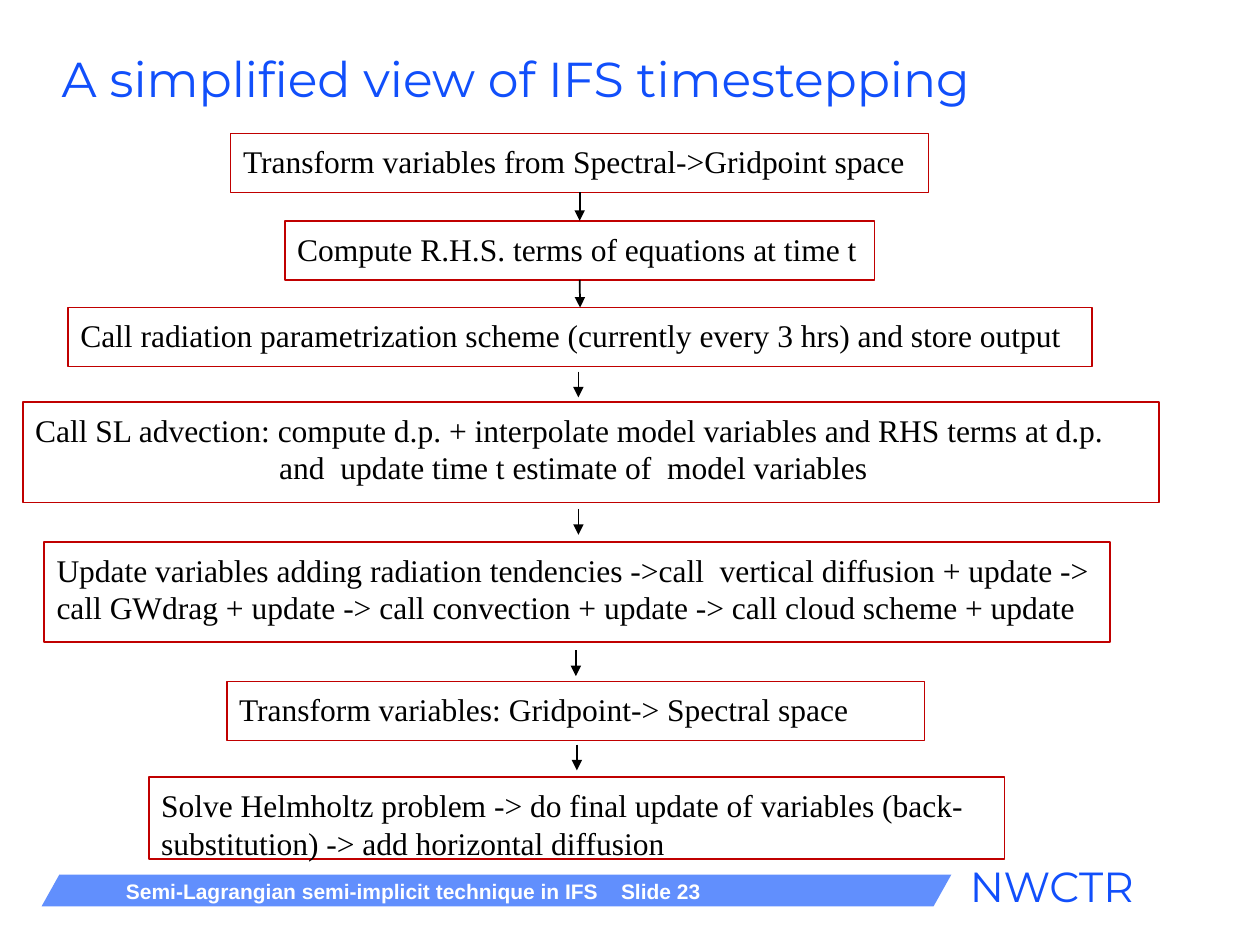
from lxml import etree
from pptx import Presentation
from pptx.dml.color import RGBColor
from pptx.enum.shapes import MSO_CONNECTOR as Connector, MSO_SHAPE as Shape
from pptx.enum.text import MSO_ANCHOR as Anchor, PP_ALIGN as Align
from pptx.oxml.ns import qn
from pptx.util import Cm, Pt

COLORS = {
    "blue": "114FFB",
    "band": "618FFD",
    "red": "C00000",
    "black": "000000",
    "white": "FFFFFF",
}

STEPS = [
    (4.65, 2.69, 14.07, 1.19, ["Transform variables from Spectral->Gridpoint space"]),
    (5.74, 4.45, 11.89, 1.19, ["Compute R.H.S. terms of equations at time t"]),
    (1.37, 6.2, 20.65, 1.19,
     ["Call radiation parametrization scheme (currently every 3 hrs) and store output"]),
    (0.46, 8.1, 22.91, 2.03,
     ["Call SL advection: compute d.p. + interpolate model variables and RHS terms at d.p.",
      "and  update time t estimate of  model variables"]),
    (0.89, 10.92, 21.49, 2.03,
     ["Update variables adding radiation tendencies ->call  vertical diffusion + update -> "
      "call GWdrag + update -> call convection + update -> call cloud scheme + update"]),
    (4.57, 13.74, 14.07, 1.19, ["Transform variables: Gridpoint-> Spectral space"]),
    (3.0, 15.67, 17.25, 1.65,
     ["Solve Helmholtz problem -> do final update of variables (back-substitution) "
      "-> add horizontal diffusion"]),
]

FREE_ARROWS = [(11.66, 7.49), (11.66, 10.26), (11.61, 13.11), (11.63, 15.01)]
ARROW_LENGTH = 0.52
CONTINUATION_INDENT = 4.92
SLIDE_NUMBER_TAB = 9.98


def color(name):
    return RGBColor.from_string(COLORS[name])


class FlowSlide:
    def __init__(self, deck):
        self.slide = deck.slides.add_slide(deck.slide_layouts[5])
        self.shapes = self.slide.shapes

    def format_text(self, frame, font, size, ink, bold=False, anchor=Anchor.TOP):
        frame.word_wrap = True
        frame.vertical_anchor = anchor
        for para in frame.paragraphs:
            para.alignment = Align.LEFT
            for span in para.runs:
                span.font.name = font
                span.font.size = Pt(size)
                span.font.bold = bold
                span.font.color.rgb = color(ink)

    def title(self, text, left, top, width, height):
        box = self.shapes.title
        box.left, box.top, box.width, box.height = map(Cm, (left, top, width, height))
        box.text_frame.text = text
        self.format_text(box.text_frame, "Montserrat", 28, "blue", anchor=Anchor.MIDDLE)

    def label(self, text, left, top, width, height, font, size, ink, bold=False, tab=None):
        box = self.shapes.add_textbox(*map(Cm, (left, top, width, height)))
        frame = box.text_frame
        frame.text = text
        if tab:
            properties = frame.paragraphs[0]._p.get_or_add_pPr()
            stops = etree.SubElement(properties, qn("a:tabLst"))
            etree.SubElement(stops, qn("a:tab"), pos=str(Cm(tab)), algn="l")
        self.format_text(frame, font, size, ink, bold)

    def panel(self, kind, left, top, width, height, fill, line=None):
        box = self.shapes.add_shape(kind, *map(Cm, (left, top, width, height)))
        box.shadow.inherit = False
        box.fill.solid()
        box.fill.fore_color.rgb = color(fill)
        if line:
            box.line.color.rgb = color(line)
            box.line.width = Pt(1)
        else:
            box.line.fill.background()
        return box

    def step(self, left, top, width, height, lines):
        box = self.panel(Shape.RECTANGLE, left, top, width, height, "white", "red")
        frame = box.text_frame
        frame.margin_top = Cm(0.18)
        frame.text = "\n".join(lines)
        for para in frame.paragraphs[1:]:
            para._p.get_or_add_pPr().set("marL", str(Cm(CONTINUATION_INDENT)))
        self.format_text(frame, "Times New Roman", 18, "black")
        return box

    def arrow(self, x=0, top=0, source=None, target=None):
        line = self.shapes.add_connector(
            Connector.STRAIGHT, Cm(x), Cm(top), Cm(x), Cm(top + ARROW_LENGTH))
        if source is not None:
            line.begin_connect(source, 2)
            line.end_connect(target, 0)
        line.line.color.rgb = color("black")
        line.line.width = Pt(1)
        etree.SubElement(line.line._get_or_add_ln(), qn("a:tailEnd"), type="triangle")
        etree.SubElement(line._element.spPr, qn("a:effectLst"))


def main():
    deck = Presentation()
    deck.slide_width, deck.slide_height = Cm(25.4), Cm(19.05)
    page = FlowSlide(deck)

    page.label("NWCTR", 19.3, 17.22, 4.5, 1.45, "Montserrat", 24, "blue")
    band = page.panel(Shape.PARALLELOGRAM, 0.84, 17.63, 18.34, 0.64, "band")
    band.adjustments[0] = 0.56
    page.label("Semi-Lagrangian semi-implicit technique in IFS\tSlide 23",
               2.29, 17.58, 13.5, 0.76, "Arial", 12, "white", True, SLIDE_NUMBER_TAB)
    page.title("A simplified view of IFS timestepping", 0.99, 0.84, 23.44, 1.47)

    boxes = [page.step(*step) for step in STEPS]
    for source, target in zip(boxes[:2], boxes[1:3]):
        page.arrow(source=source, target=target)
    for x, top in FREE_ARROWS:
        page.arrow(x, top)

    deck.save("out.pptx")


if __name__ == "__main__":
    main()
